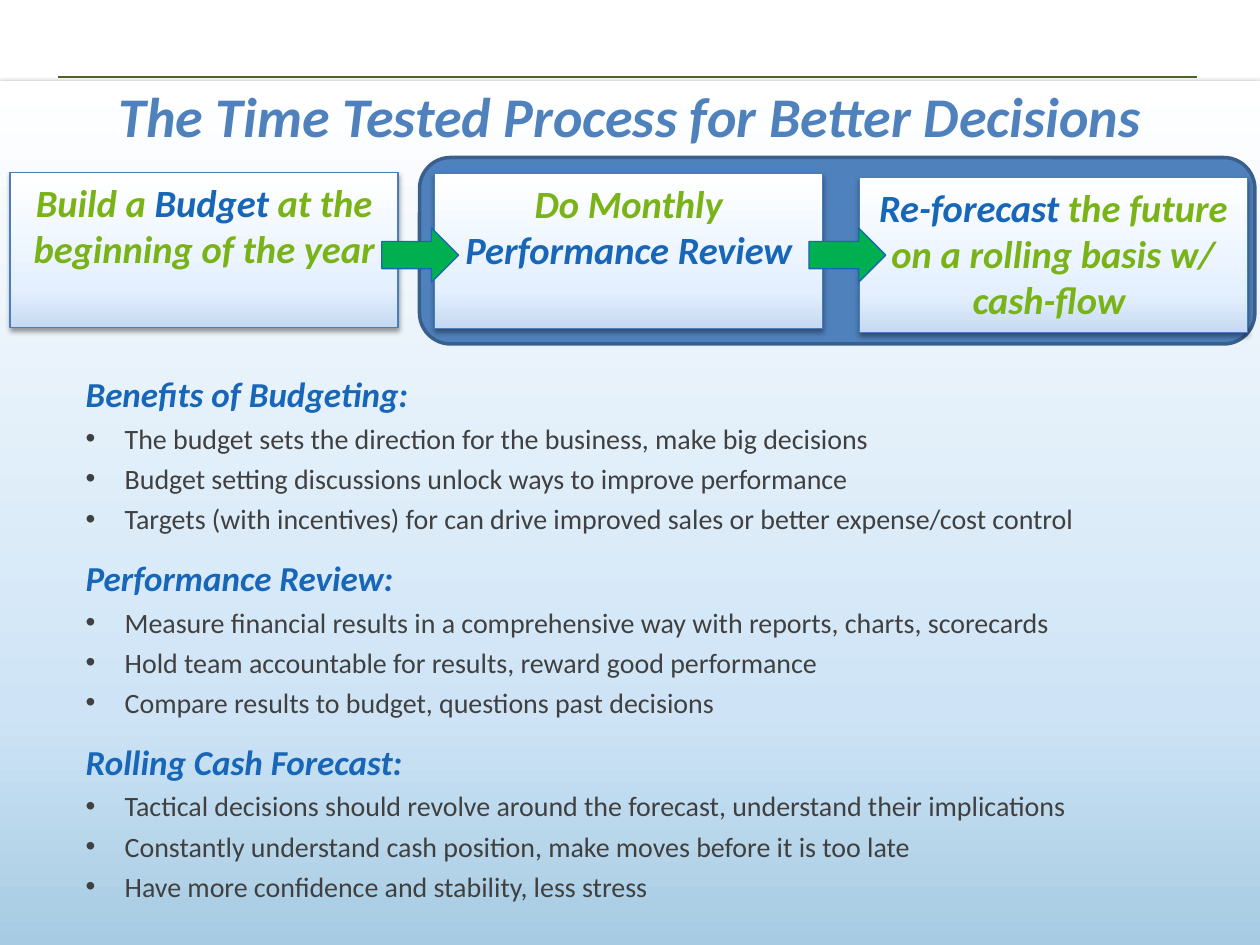
from dataclasses import dataclass

from lxml import etree
from pptx import Presentation
from pptx.dml.color import RGBColor
from pptx.enum.shapes import MSO_CONNECTOR, MSO_SHAPE
from pptx.enum.text import MSO_ANCHOR, MSO_AUTO_SIZE, PP_ALIGN
from pptx.oxml import parse_xml
from pptx.oxml.ns import nsdecls, qn
from pptx.util import Inches, Pt

RECTANGLE = MSO_SHAPE.RECTANGLE
ROUNDED = MSO_SHAPE.ROUNDED_RECTANGLE
ARROW = MSO_SHAPE.RIGHT_ARROW
STRAIGHT = MSO_CONNECTOR.STRAIGHT
TOP, MIDDLE = MSO_ANCHOR.TOP, MSO_ANCHOR.MIDDLE
GROW, FIXED = MSO_AUTO_SIZE.SHAPE_TO_FIT_TEXT, MSO_AUTO_SIZE.NONE
CENTER, LEFT = PP_ALIGN.CENTER, PP_ALIGN.LEFT

COLORS = {
    "rule": "4F6228", "title": "4F81BD", "group": "4F81BD",
    "group_edge": "3A5F8C", "step_edge": "4A7EBB", "blue": "1766B8",
    "green": "79B317", "arrow": "00B050", "text": "404040",
}
PANEL_STOPS = ((0, "A6CBE2"), (27, "CEE4F6"), (100, "FFFFFF"))
STEP_STOPS = ((0, "C6D9F1"), (25, "E4F0FF"), (100, "FFFFFF"))

EMPHASIS = {"name": "Calibri", "bold": True, "italic": True}
TITLE_FONT = {**EMPHASIS, "size": Pt(32)}
STEP_FONT = {**EMPHASIS, "size": Pt(22)}
HEADING_FONT = {**EMPHASIS, "size": Pt(20)}
POINT_FONT = {"name": "Calibri", "bold": False, "italic": False, "size": Pt(16)}

STEP_LEFT, STEP_PITCH = 0.08, 3.37
ARROW_LEFT, ARROW_PITCH = 3.03, 3.39


@dataclass
class Step:
    top: float
    phrases: tuple  # (text, color name) pairs


@dataclass
class Section:
    heading: str
    spacing: float
    points: tuple


STEPS = (
    Step(1.37, (("Build a ", "green"), ("Budget", "blue"),
                (" at the beginning of the year", "green"))),
    Step(1.38, (("Do Monthly ", "green"), ("Performance Review", "blue"))),
    Step(1.41, (("Re-forecast", "blue"),
                (" the future on a rolling basis w/ cash-flow ", "green"))),
)
SECTIONS = (
    Section("Benefits of Budgeting:", 1.2, (
        "The budget sets the direction for the business, make big decisions",
        "Budget setting discussions unlock ways to improve performance",
        "Targets (with incentives) for can drive improved sales or better expense/cost control",
    )),
    Section("Performance Review:", 1.5, (
        "Measure financial results in a comprehensive way with reports, charts, scorecards",
        "Hold team accountable for results, reward good performance",
        "Compare results to budget, questions past decisions",
    )),
    Section("Rolling Cash Forecast:", 1.5, (
        "Tactical decisions should revolve around the forecast, understand their implications",
        "Constantly understand cash position, make moves before it is too late",
        "Have more confidence and stability, less stress",
    )),
)


def rgb(name: str) -> RGBColor:
    return RGBColor.from_string(COLORS[name])


def apply(target, settings: dict) -> None:
    for attribute, value in settings.items():
        setattr(target, attribute, value)


def add_run(paragraph, text: str, color: str, font: dict) -> None:
    run = paragraph.add_run()
    run.text = text
    apply(run.font, font)
    run.font.color.rgb = rgb(color)


def add_box(slide, preset, left: float, top: float, width: float, height: float,
            edge: str = "", edge_width: float = 0.75, fill: str = ""):
    box = slide.shapes.add_shape(preset, Inches(left), Inches(top),
                                 Inches(width), Inches(height))
    box.shadow.inherit = False
    if fill:
        box.fill.solid()
        box.fill.fore_color.rgb = rgb(fill)
    if edge:
        box.line.color.rgb = rgb(edge)
        box.line.width = Pt(edge_width)
    else:
        box.line.fill.background()
    return box


def shade(box, stops: tuple) -> None:
    """Give the box a bottom-to-top gradient and a soft shadow below."""
    stop_xml = "".join(f'<a:gs pos="{position * 1000}"><a:srgbClr val="{color}"/></a:gs>'
                       for position, color in stops)
    gradient = parse_xml(f'<a:gradFill {nsdecls("a")} rotWithShape="1"><a:gsLst>{stop_xml}'
                         '</a:gsLst><a:lin ang="16200000" scaled="0"/></a:gradFill>')
    shadow = parse_xml(f'<a:outerShdw {nsdecls("a")} blurRad="{Pt(3.1)}" dist="{Pt(1.6)}" '
                       'dir="5400000" rotWithShape="0"><a:srgbClr val="000000">'
                       '<a:alpha val="38000"/></a:srgbClr></a:outerShdw>')
    properties = box._element.spPr
    properties.find(qn("a:prstGeom")).addnext(gradient)
    properties.find(qn("a:effectLst")).append(shadow)


def place(placeholder, left: float, top: float, width: float, height: float) -> None:
    """Move the placeholder and bring it in front of what is drawn so far."""
    apply(placeholder, {"left": Inches(left), "top": Inches(top),
                        "width": Inches(width), "height": Inches(height)})
    element = placeholder._element
    element.getparent().append(element)


def add_list_line(paragraph, text: str, color: str, font: dict,
                  spacing: float, bullet: str = "") -> None:
    apply(paragraph, {"line_spacing": spacing, "space_before": Pt(0), "alignment": LEFT})
    indent = Inches(0.31) if bullet else 0
    properties = paragraph._p.get_or_add_pPr()
    properties.set("marL", str(indent))
    properties.set("indent", str(-indent))
    if bullet:
        etree.SubElement(properties, qn("a:buFont")).set("typeface", "Arial")
        etree.SubElement(properties, qn("a:buChar")).set("char", bullet)
    else:
        etree.SubElement(properties, qn("a:buNone"))
    add_run(paragraph, text, color, font)


def fill_body(body) -> None:
    frame = body.text_frame
    apply(frame, {"word_wrap": True, "auto_size": GROW, "vertical_anchor": TOP})
    lines = []
    for section in SECTIONS:
        lines.append((section.heading, "blue", HEADING_FONT, section.spacing))
        lines += [(point, "text", POINT_FONT, 1.2, "•") for point in section.points]
    for number, line in enumerate(lines):
        add_list_line(frame.add_paragraph() if number else frame.paragraphs[0], *line)


def add_step(slide, left: float, step: Step) -> None:
    box = add_box(slide, RECTANGLE, left, step.top, 3.08, 1.23, "step_edge")
    shade(box, STEP_STOPS)
    apply(box.text_frame, {"word_wrap": True, "auto_size": GROW, "vertical_anchor": TOP})
    paragraph = box.text_frame.paragraphs[0]
    paragraph.alignment = CENTER
    for text, color in step.phrases:
        add_run(paragraph, text, color, STEP_FONT)


def main() -> None:
    deck = Presentation()
    deck.slide_width, deck.slide_height = Inches(10), Inches(7.5)
    slide = deck.slides.add_slide(deck.slide_layouts[1])
    title, body = slide.placeholders

    rule = slide.shapes.add_connector(STRAIGHT, Inches(0.46), Inches(0.61),
                                      Inches(9.5), Inches(0.61))
    rule.line.color.rgb = rgb("rule")
    rule.line.width = Pt(1)
    etree.SubElement(rule._element.spPr, qn("a:effectLst"))

    shade(add_box(slide, RECTANGLE, 0, 0.64, 10, 6.86), PANEL_STOPS)
    add_box(slide, ROUNDED, 3.33, 1.25, 6.63, 1.48, "group_edge", 2, "group")

    place(body, 0.58, 2.84, 9.52, 4.48)
    fill_body(body)
    place(title, 0, 0.6, 10, 0.63)
    apply(title.text_frame, {"word_wrap": True, "auto_size": FIXED, "vertical_anchor": MIDDLE})
    heading = title.text_frame.paragraphs[0]
    heading.alignment = CENTER
    add_run(heading, "The Time Tested Process for Better Decisions", "title", TITLE_FONT)

    for column, step in enumerate(STEPS):
        add_step(slide, STEP_LEFT + column * STEP_PITCH, step)
    for gap in range(len(STEPS) - 1):
        add_box(slide, ARROW, ARROW_LEFT + gap * ARROW_PITCH, 1.81, 0.61, 0.43,
                "blue", fill="arrow")

    deck.save("out.pptx")


if __name__ == "__main__":
    main()
